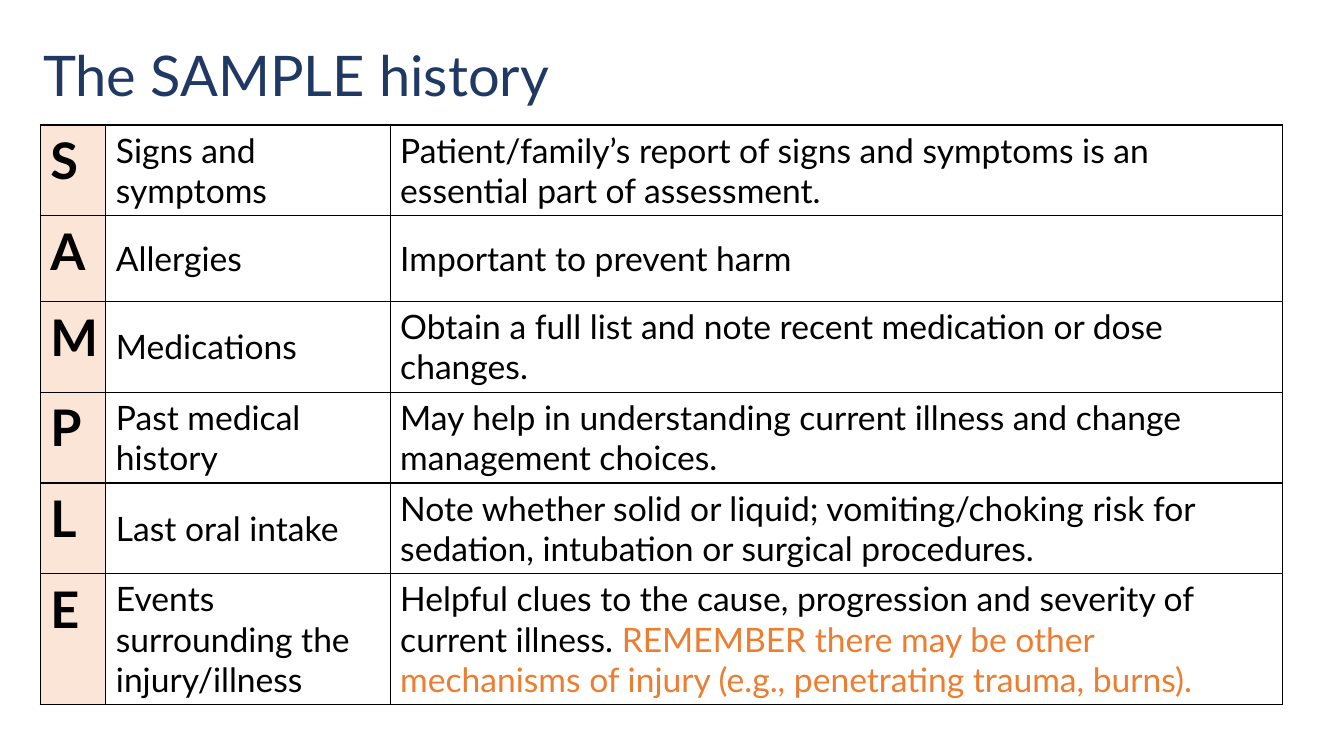
"""Build the SAMPLE history slide."""
from dataclasses import dataclass

import lxml.etree
import pptx
import pptx.dml.color
import pptx.enum.text
import pptx.oxml.ns
import pptx.util

Inches = pptx.util.Inches
Anchor = pptx.enum.text.MSO_ANCHOR


@dataclass(frozen=True)
class Theme:
    face: str = "Lato"
    navy: str = "203864"
    ink: str = "000000"
    peach: str = "FBE5D6"
    orange: str = "ED7D31"
    title: int = 40
    letter: int = 36
    body: int = 24
    line: int = 1


@dataclass(frozen=True)
class Item:
    letter: str
    topic: str
    detail: str
    alert: str = ""


THEME = Theme()
WIDTHS = (0.65, 2.82, 8.85)
HEIGHT = 0.85
ITEMS = (
    Item("S", "Signs and symptoms",
         "Patient/family’s report of signs and symptoms is an essential part of assessment."),
    Item("A", "Allergies", "Important to prevent harm"),
    Item("M", "Medications",
         "Obtain a full list and note recent medication or dose changes."),
    Item("P", "Past medical history",
         "May help in understanding current illness and change management choices."),
    Item("L", "Last oral intake",
         "Note whether solid or liquid; vomiting/choking risk for sedation, "
         "intubation or surgical procedures."),
    Item("E", "Events surrounding the injury/illness",
         "Helpful clues to the cause, progression and severity of current illness. ",
         "REMEMBER there may be other mechanisms of injury (e.g., penetrating trauma, burns)."),
)


def write(frame, text: str, size: int, color: str, bold: bool = False) -> None:
    run = frame.paragraphs[0].add_run()
    run.text = text
    form = {"name": THEME.face, "size": pptx.util.Pt(size), "bold": bold}
    for key, value in form.items():
        setattr(run.font, key, value)
    run.font.color.rgb = pptx.dml.color.RGBColor.from_string(color)


def border(cell) -> None:
    qn = pptx.oxml.ns.qn
    props = cell._tc.get_or_add_tcPr()
    for side in ("lnL", "lnR", "lnT", "lnB"):
        line = lxml.etree.SubElement(
            props, qn(f"a:{side}"), w=str(pptx.util.Pt(THEME.line)))
        fill = lxml.etree.SubElement(line, qn("a:solidFill"))
        lxml.etree.SubElement(fill, qn("a:srgbClr"), val=THEME.ink)


def add_title(slide) -> None:
    box = slide.shapes.add_textbox(
        Inches(0.33), Inches(0.05), Inches(11.5), Inches(1.45))
    form = {"word_wrap": True, "vertical_anchor": Anchor.MIDDLE}
    for key, value in form.items():
        setattr(box.text_frame, key, value)
    box.text_frame.paragraphs[0].line_spacing = 0.9
    write(box.text_frame, "The SAMPLE history", THEME.title, THEME.navy)


def fill_row(cells, item: Item) -> None:
    for cell in cells:
        border(cell)
        cell.fill.background()
        cell.vertical_anchor = Anchor.MIDDLE
    first, second, third = cells
    first.vertical_anchor = Anchor.TOP
    first.fill.solid()
    first.fill.fore_color.rgb = pptx.dml.color.RGBColor.from_string(THEME.peach)
    write(first.text_frame, item.letter, THEME.letter, THEME.ink, True)
    write(second.text_frame, item.topic, THEME.body, THEME.ink)
    write(third.text_frame, item.detail, THEME.body, THEME.ink)
    if item.alert:
        write(third.text_frame, item.alert, THEME.body, THEME.orange)


def add_grid(slide) -> None:
    table = slide.shapes.add_table(
        len(ITEMS), len(WIDTHS), Inches(0.4), Inches(1.24),
        Inches(sum(WIDTHS)), Inches(HEIGHT * len(ITEMS))).table
    for key, value in {"first_row": False, "horz_banding": False}.items():
        setattr(table, key, value)
    for column, width in zip(table.columns, WIDTHS):
        column.width = Inches(width)
    for row, item in zip(table.rows, ITEMS):
        row.height = Inches(HEIGHT)
        fill_row(tuple(row.cells), item)


def main() -> None:
    deck = pptx.Presentation()
    deck.slide_width, deck.slide_height = Inches(13.33), Inches(7.5)
    slide = deck.slides.add_slide(deck.slide_layouts[6])
    add_title(slide)
    add_grid(slide)
    deck.save("out.pptx")


if __name__ == "__main__":
    main()
